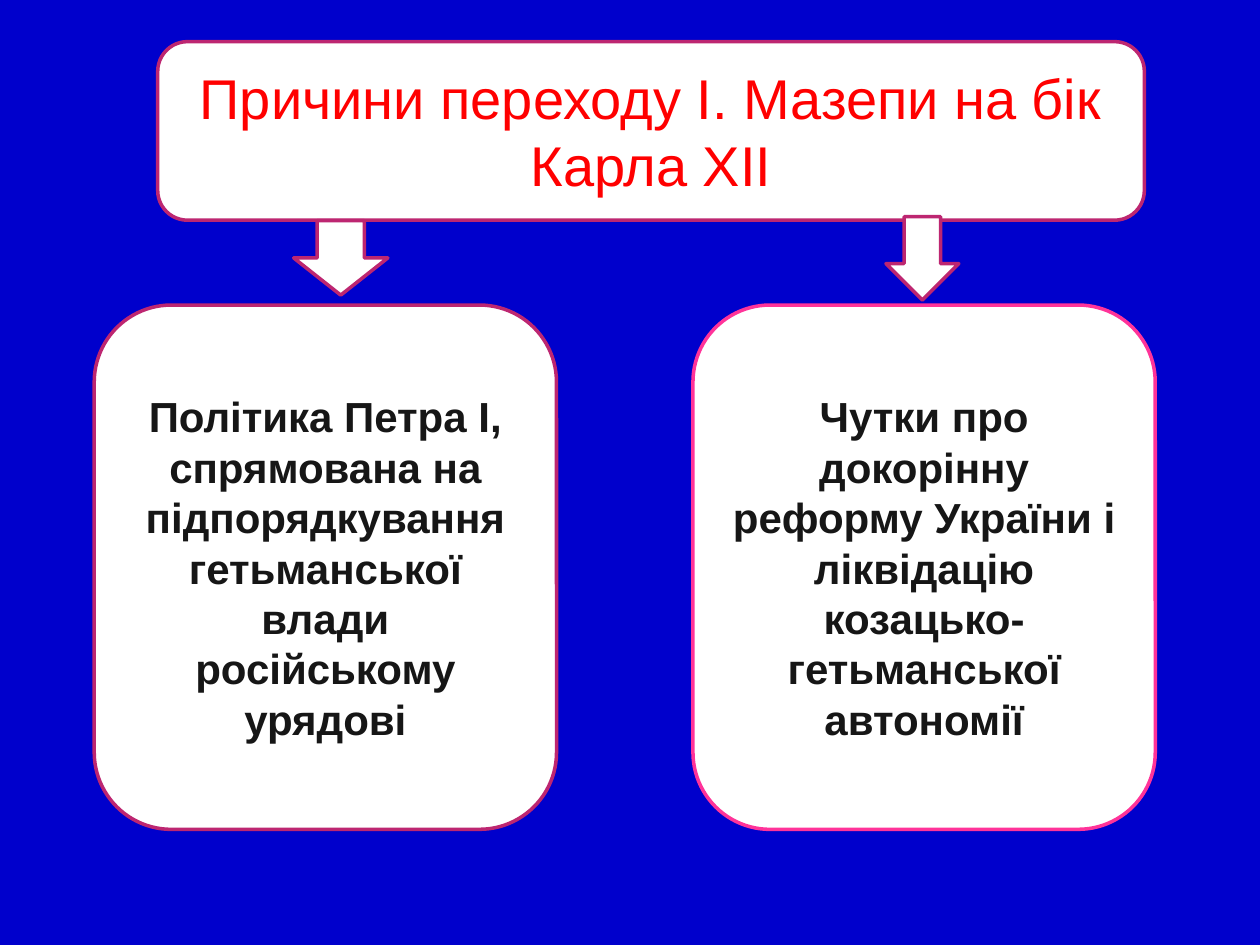
from pptx import Presentation
from pptx.dml.color import RGBColor
from pptx.enum.shapes import MSO_SHAPE
from pptx.enum.text import MSO_ANCHOR, PP_ALIGN
from pptx.util import Cm, Pt


def color(hex_string):
    return RGBColor.from_string(hex_string)


def write_text(shape, text, size=24, text_color="161616", bold=False, font_name="Arial"):
    frame = shape.text_frame
    frame.word_wrap = True
    frame.vertical_anchor = MSO_ANCHOR.MIDDLE
    paragraph = frame.paragraphs[0]
    paragraph.alignment = PP_ALIGN.CENTER
    run = paragraph.add_run()
    run.text = text
    run.font.name = font_name
    run.font.size = Pt(size)
    run.font.bold = bold
    run.font.color.rgb = color(text_color)


class SlideBuilder:
    """Holds the shared style and the slide being filled."""

    background = "0000CC"
    fill = "FFFFFF"
    outline = "BD2671"
    line_width = Pt(2)

    def __init__(self, slide):
        self.slide = slide
        slide.background.fill.solid()
        slide.background.fill.fore_color.rgb = color(self.background)

    def add_outlined(self, kind, left, top, width, height, outline=None):
        """Add a preset shape in the slide's style, with lengths in centimetres."""
        shape = self.slide.shapes.add_shape(kind, Cm(left), Cm(top), Cm(width), Cm(height))
        shape.shadow.inherit = False
        shape.fill.solid()
        shape.fill.fore_color.rgb = color(self.fill)
        shape.line.color.rgb = color(outline or self.outline)
        shape.line.width = self.line_width
        return shape

    def add_title(self, text):
        shape = self.add_outlined(MSO_SHAPE.FLOWCHART_ALTERNATE_PROCESS, 3.18, 0.84, 19.89, 3.6)
        write_text(shape, text, size=32, text_color="FF0000")

    def add_reason(self, text, left, kind, outline=None):
        shape = self.add_outlined(kind, left, 6.15, 9.32, 10.57, outline)
        write_text(shape, text, bold=True)

    def add_arrow(self, left, top, width, height):
        self.add_outlined(MSO_SHAPE.DOWN_ARROW, left, top, width, height)


def main():
    presentation = Presentation()
    presentation.slide_width = Cm(25.4)
    presentation.slide_height = Cm(19.05)
    builder = SlideBuilder(presentation.slides.add_slide(presentation.slide_layouts[6]))

    builder.add_reason(
        "Чутки про докорінну реформу України і ліквідацію козацько-гетьманської автономії",
        13.97, MSO_SHAPE.ROUNDED_RECTANGLE, outline="FF3399")
    builder.add_reason(
        "Політика Петра І, спрямована на підпорядкування гетьманської влади російському урядові",
        1.9, MSO_SHAPE.FLOWCHART_ALTERNATE_PROCESS)
    builder.add_title("Причини переходу І. Мазепи на бік Карла ХІІ")
    builder.add_arrow(5.92, 4.45, 1.9, 1.5)
    builder.add_arrow(17.86, 4.37, 1.47, 1.68)

    presentation.save("out.pptx")


if __name__ == "__main__":
    main()
